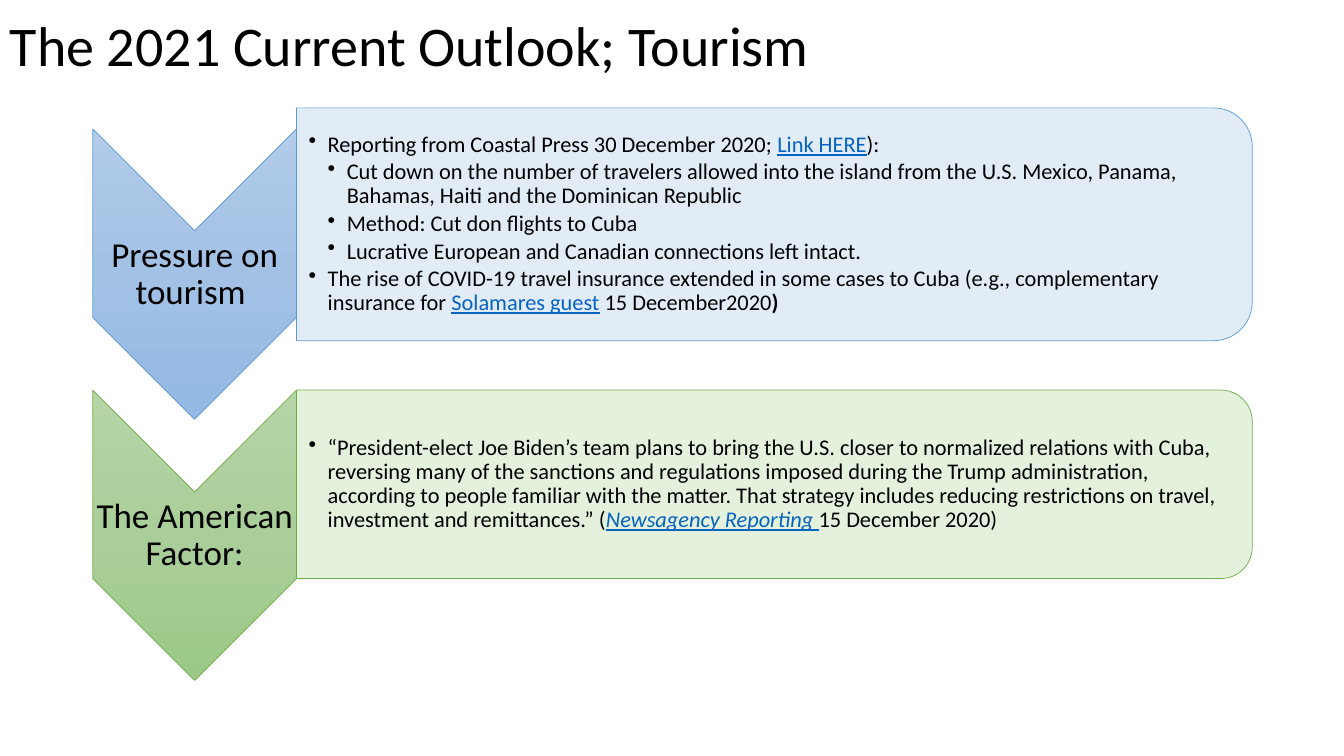
from dataclasses import dataclass

from lxml.etree import SubElement
from pptx import Presentation
from pptx.dml.color import RGBColor
from pptx.enum.shapes import MSO_SHAPE
from pptx.enum.text import MSO_ANCHOR, PP_ALIGN
from pptx.oxml.ns import qn
from pptx.util import Emu, Pt

EMU_PER_PX = 9144  # 100 px to the inch


def px(length):
    return Emu(round(length * EMU_PER_PX))


@dataclass(frozen=True)
class Hue:
    line: str
    band: str
    gradient: tuple


@dataclass(frozen=True)
class Theme:
    font: str = "Calibri"
    ink: str = "000000"
    link: str = "0563C1"
    title_size: int = 40
    label_size: int = 25
    body_size: int = 16
    blue: Hue = Hue("5B9BD5", "DEEBF7", ("B1CBE9", "A3C1E5", "93B9E4"))
    green: Hue = Hue("70AD47", "E2F0D9", ("B5D5A7", "AACE9A", "9CC987"))


class SlideBuilder:
    def __init__(self, slide, theme):
        self.slide = slide
        self.theme = theme

    def turned_shape(self, preset, left, top, width, height, line):
        """Add a shape turned by 90 degrees that covers the given area."""
        shape = self.slide.shapes.add_shape(
            preset, px(left + (width - height) / 2), px(top + (height - width) / 2),
            px(height), px(width))
        shape.rotation = 90
        shape.shadow.inherit = False
        shape.line.color.rgb = RGBColor.from_string(line)
        shape.line.width = Pt(0.5)
        return shape

    def chevron(self, left, top, width, height, hue):
        shape = self.turned_shape(MSO_SHAPE.CHEVRON, left, top, width, height, hue.line)
        shape.fill.gradient()
        gradient = shape._element.spPr.find(qn("a:gradFill"))
        gradient.set("rotWithShape", "0")
        for child in list(gradient):
            gradient.remove(child)
        stops = SubElement(gradient, qn("a:gsLst"))
        for position, color in zip((0, 50000, 100000), hue.gradient):
            stop = SubElement(stops, qn("a:gs"), pos=str(position))
            SubElement(stop, qn("a:srgbClr"), val=color)
        SubElement(gradient, qn("a:lin"), ang="5400000", scaled="0")

    def band(self, left, top, width, height, hue):
        shape = self.turned_shape(MSO_SHAPE.ROUND_2_SAME_RECTANGLE,
                                  left, top, width, height, hue.line)
        shape.fill.solid()
        shape.fill.fore_color.rgb = RGBColor.from_string(hue.band)
        color = shape._element.spPr.find(qn("a:solidFill"))[0]
        SubElement(color, qn("a:alpha"), val="90000")

    def text_box(self, left, top, width, height, insets):
        box = self.slide.shapes.add_textbox(px(left), px(top), px(width), px(height))
        frame = box.text_frame
        frame.word_wrap = True
        frame.vertical_anchor = MSO_ANCHOR.MIDDLE
        frame.margin_left, frame.margin_top, frame.margin_right, frame.margin_bottom = map(px, insets)
        return frame

    def fill_paragraph(self, para, spans, size, space_after=0, level=0):
        """Write spans of (text, style); a level above 0 gives a bullet."""
        para.line_spacing = 0.9
        para.space_after = Pt(space_after)
        if level:
            para.level = level
            properties = para._p.get_or_add_pPr()
            properties.set("marL", str(px(19 * level)))
            properties.set("indent", str(px(-19)))
            SubElement(properties, qn("a:buChar"), char="•")
        para.font.name = self.theme.font
        para.font.size = Pt(size)
        para.font.color.rgb = RGBColor.from_string(self.theme.ink)
        for text, style in spans:
            span = para.add_run()
            span.text = text
            if "link" in style:
                span.font.color.rgb = RGBColor.from_string(self.theme.link)
                span.font.underline = True
            if "italic" in style:
                span.font.italic = True
            if "bold" in style:
                span.font.bold = True

    def title(self, text):
        frame = self.text_box(0, 0, 1242, 96, (10, 5, 10, 5))
        self.fill_paragraph(frame.paragraphs[0], [(text, "")], self.theme.title_size)

    def label(self, left, top, width, height, text):
        frame = self.text_box(left, top, width, height, (2, 2, 2, 2))
        para = frame.paragraphs[0]
        para.alignment = PP_ALIGN.CENTER
        size = self.theme.label_size
        self.fill_paragraph(para, [(text, "")], size, 0.35 * size)

    def bullets(self, left, top, width, height, items):
        frame = self.text_box(left, top, width, height, (12, 1, 1, 1))
        size = self.theme.body_size
        for index, (level, spans) in enumerate(items):
            para = frame.add_paragraph() if index else frame.paragraphs[0]
            self.fill_paragraph(para, spans, size, 0.15 * size, level)

    def section(self, top, band_top, band_height, hue, label, items):
        left, width, band_width = 92, 202, 948
        band_left = left + width
        inset = round(band_height * 0.049)  # clears the rounded corners
        self.chevron(left, top, width, 288, hue)
        self.label(left, top + width // 2, width, 87, label)
        self.band(band_left, band_top, band_width, band_height, hue)
        self.bullets(band_left, band_top + inset, band_width - inset,
                     band_height - 2 * inset, items)


PRESSURE_ITEMS = [
    (1, [("Reporting from Coastal Press 30 December 2020; ", ""),
         ("Link HERE", "link"), ("):", "")]),
    (2, [("Cut down on the number of travelers allowed into the island from the U.S. "
          "Mexico, Panama, Bahamas, Haiti and the Dominican Republic", "")]),
    (2, [("Method: Cut don flights to Cuba", "")]),
    (2, [("Lucrative European and Canadian connections left intact.", "")]),
    (1, [("The rise of COVID-19 travel insurance extended in some cases to Cuba "
          "(e.g., complementary insurance for ", ""),
         ("Solamares guest", "link"), (" 15 December2020", ""), (")", "bold")]),
]

AMERICAN_ITEMS = [
    (1, [("“President-elect Joe Biden’s team plans to bring the U.S. closer to normalized "
          "relations with Cuba, reversing many of the sanctions and regulations imposed "
          "during the Trump administration, according to people familiar with the matter. "
          "That strategy includes reducing restrictions on travel, investment and "
          "remittances.” (", ""),
         ("Newsagency Reporting ", "link italic"), ("15 December 2020)", "")]),
]


def main():
    deck = Presentation()
    deck.slide_width, deck.slide_height = px(1333), px(750)
    theme = Theme()
    page = SlideBuilder(deck.slides.add_slide(deck.slide_layouts[6]), theme)

    # Heading
    page.title("The 2021 Current Outlook; Tourism")

    # Chevron list
    page.section(128, 107, 231, theme.blue, "Pressure on tourism ", PRESSURE_ITEMS)
    page.section(387, 387, 187, theme.green, "The American Factor:", AMERICAN_ITEMS)

    deck.save("out.pptx")


if __name__ == "__main__":
    main()
